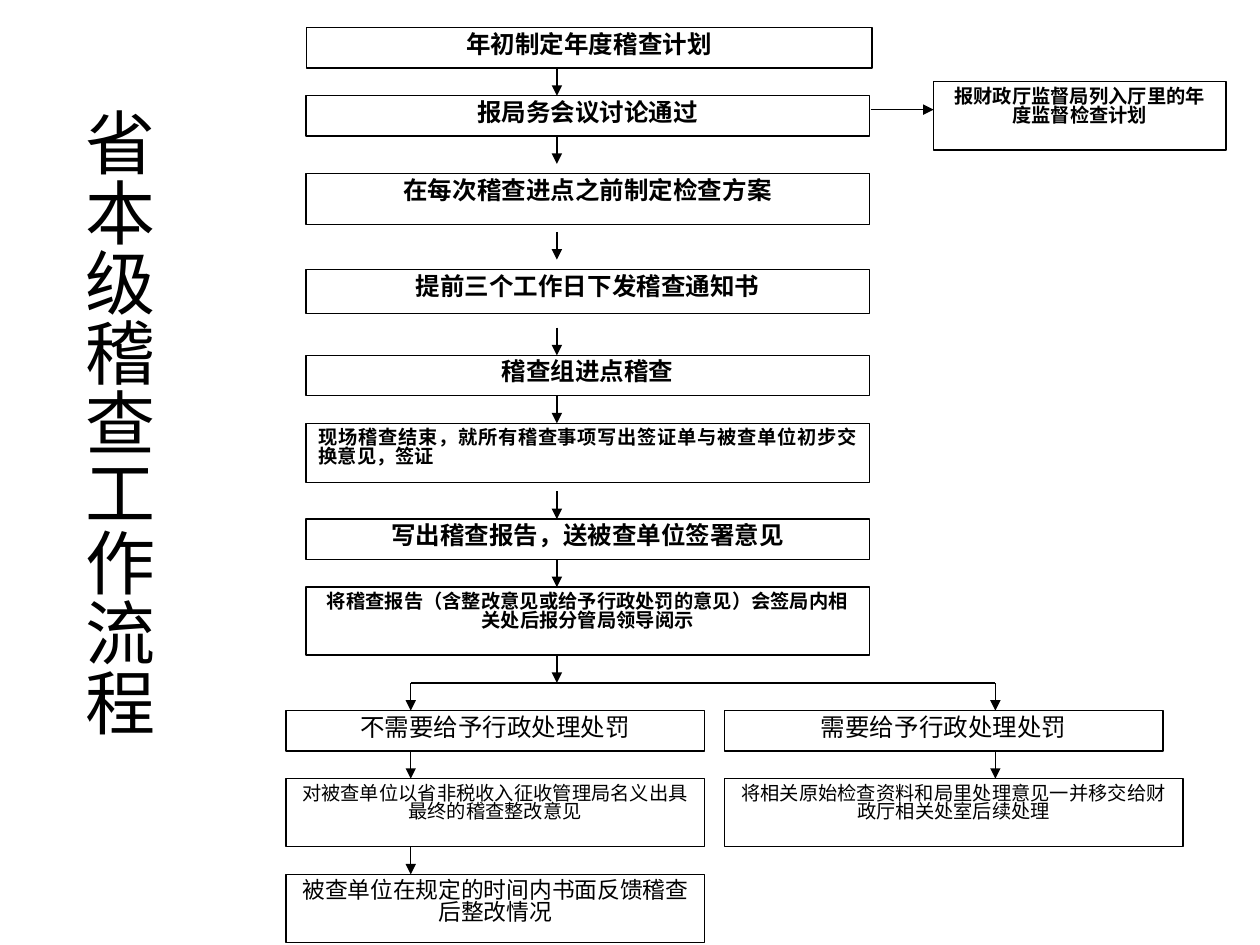
from dataclasses import dataclass

from lxml.etree import SubElement
from pptx import Presentation
from pptx.dml.color import RGBColor
from pptx.enum.shapes import MSO_CONNECTOR as Connector, MSO_SHAPE as Shape
from pptx.enum.text import MSO_ANCHOR as Anchor, MSO_AUTO_SIZE as AutoSize, PP_ALIGN as Align
from pptx.oxml.ns import qn
from pptx.util import Inches, Pt


@dataclass(frozen=True)
class Theme:
    ink: RGBColor = RGBColor(0, 0, 0)
    paper: RGBColor = RGBColor(255, 255, 255)
    body_font: str = "Noto Sans CJK SC"
    title_font: str = "Times New Roman"
    title: int = 40
    large: int = 14
    medium: int = 13
    small: int = 11
    line: float = 0.75


THEME = Theme()
ARROW_LENGTH = 0.22


def set_values(target, values):
    for name, value in values.items():
        setattr(target, name, value)


def format_text(shape, text, size, font, bold, align, spacing):
    paragraph = shape.text_frame.paragraphs[0]
    set_values(paragraph, {"alignment": align, "line_spacing": spacing})
    run = paragraph.add_run()
    run.text = text
    set_values(run.font, {"name": font, "size": Pt(size), "bold": bold})
    run.font.color.rgb = THEME.ink
    east_asian = SubElement(run.font._element, qn("a:ea"))
    east_asian.set("typeface", THEME.body_font)


def add_step(slide, box, text, size, bold=True, align=Align.CENTER):
    shape = slide.shapes.add_shape(Shape.RECTANGLE, *map(Inches, box))
    shape.shadow.inherit = False
    shape.fill.solid()
    shape.fill.fore_color.rgb = THEME.paper
    shape.line.color.rgb = THEME.ink
    shape.line.width = Pt(THEME.line)
    set_values(shape.text_frame, {
        "word_wrap": True, "vertical_anchor": Anchor.TOP,
        "margin_left": Inches(0.1), "margin_right": Inches(0.1),
        "margin_top": Inches(0.05), "margin_bottom": Inches(0.05),
    })
    format_text(shape, text, size, THEME.body_font, bold, align, 0.82)


def add_line(slide, start, end, arrow=True):
    connector = slide.shapes.add_connector(Connector.STRAIGHT, *map(Inches, (*start, *end)))
    connector.line.color.rgb = THEME.ink
    connector.line.width = Pt(THEME.line)
    if arrow:
        line = connector.line._get_or_add_ln()
        SubElement(line, qn("a:tailEnd")).set("type", "triangle")
    SubElement(connector._element.spPr, qn("a:effectLst"))


def add_down_arrows(slide, x, tops):
    for top in tops:
        add_line(slide, (x, top), (x, top + ARROW_LENGTH))


def add_title(slide, box):
    title = slide.shapes.title
    left, top, width, height = map(Inches, box)
    set_values(title, {"left": left, "top": top, "width": width, "height": height})
    set_values(title.text_frame, {
        "word_wrap": True, "auto_size": AutoSize.NONE, "vertical_anchor": Anchor.MIDDLE,
        "margin_left": Inches(0.05), "margin_right": 0,
        "margin_top": Inches(0.1), "margin_bottom": 0,
    })
    title.text_frame._txBody.bodyPr.set("vert", "eaVert")
    format_text(title, "省本级稽查工作流程", THEME.title, THEME.title_font, False, Align.LEFT, 1.1)


def add_main_flow(slide, box):
    left, top, width, height = box
    steps = [
        (0, 0.32, "年初制定年度稽查计划", THEME.large),
        (0.54, 0.32, "报局务会议讨论通过", THEME.large),
        (1.16, 0.4, "在每次稽查进点之前制定检查方案", THEME.large),
        (1.92, 0.35, "提前三个工作日下发稽查通知书", THEME.large),
        (2.6, 0.32, "稽查组进点稽查", THEME.large),
        (3.14, 0.47, "现场稽查结束，就所有稽查事项写出签证单与被查单位初步交换意见，签证", THEME.small),
        (3.9, 0.32, "写出稽查报告，送被查单位签署意见", THEME.large),
        (4.44, 0.54, "将稽查报告（含整改意见或给予行政处罚的意见）会签局内相关处后报分管局领导阅示", THEME.small),
    ]
    for index, (offset, step_height, text, size) in enumerate(steps):
        step_width = width + 0.02 if index == 0 else width
        align = Align.JUSTIFY if index == 5 else Align.CENTER
        add_step(slide, (left, top + offset, step_width, step_height), text, size, align=align)
    arrow_offsets = (0.32, 0.86, 1.62, 2.38, 2.92, 3.68, 4.22, 4.98)
    add_down_arrows(slide, left + 1.99, [top + offset for offset in arrow_offsets])


def add_side_report(slide, box):
    left, top, width, height = box
    add_step(slide, box, "报财政厅监督局列入厅里的年度监督检查计划", THEME.small)
    add_line(slide, (left - 0.5, top + 0.22), (left, top + 0.22))


def add_branch(slide, box, arrow_x, steps):
    left, top, width, height = box
    step_top = top + ARROW_LENGTH
    arrow_tops = [top]
    for step_width, step_height, text, size in steps:
        add_step(slide, (left, step_top, step_width, step_height), text, size, bold=False)
        arrow_tops.append(step_top + step_height)
        step_top += step_height + ARROW_LENGTH
    add_down_arrows(slide, arrow_x, arrow_tops[:-1])


def add_outcomes(slide, box):
    left, top, width, height = box
    left_arrow, right_arrow = left + 0.99, left + 5.63
    add_line(slide, (left_arrow, top), (right_arrow, top), arrow=False)
    add_branch(slide, (left, top, 3.32, height), left_arrow, [
        (3.32, 0.32, "不需要给予行政处理处罚", THEME.large),
        (3.32, 0.54, "对被查单位以省非税收入征收管理局名义出具最终的稽查整改意见", THEME.small),
        (3.32, 0.54, "被查单位在规定的时间内书面反馈稽查后整改情况", THEME.medium),
    ])
    add_branch(slide, (left + 3.48, top, 3.64, height), right_arrow, [
        (3.48, 0.32, "需要给予行政处理处罚", THEME.large),
        (3.64, 0.54, "将相关原始检查资料和局里处理意见一并移交给财政厅相关处室后续处理", THEME.small),
    ])


def main():
    presentation = Presentation()
    set_values(presentation, {"slide_width": Inches(10), "slide_height": Inches(7.5)})
    slide = presentation.slides.add_slide(presentation.slide_layouts[5])
    add_title(slide, (0.48, 0.76, 0.93, 5.98))
    add_main_flow(slide, (2.43, 0.22, 4.47, 4.98))
    add_side_report(slide, (7.41, 0.65, 2.32, 0.54))
    add_outcomes(slide, (2.27, 5.42, 7.12, 2.05))
    presentation.save("out.pptx")


if __name__ == "__main__":
    main()
